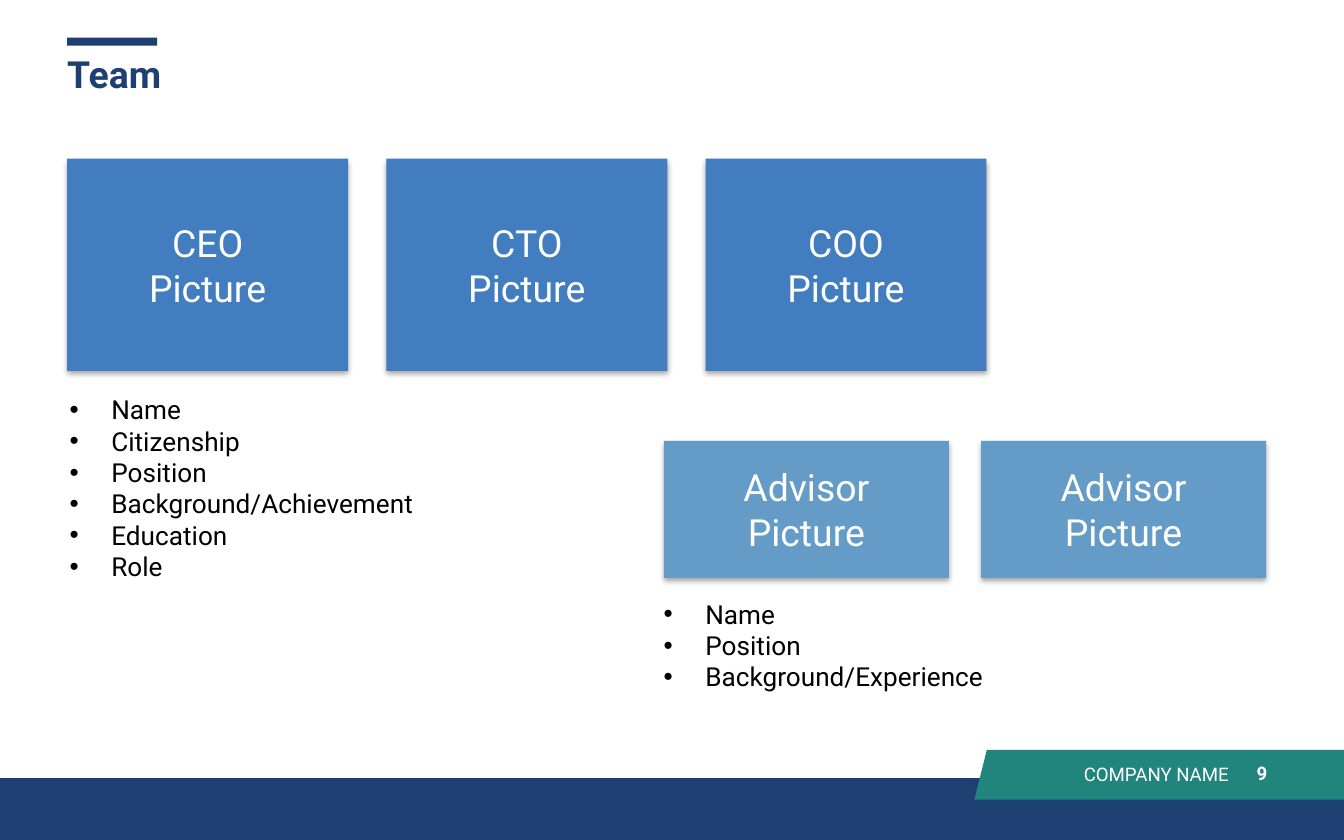
from dataclasses import dataclass

from lxml.etree import SubElement
from pptx import Presentation
from pptx.dml.color import RGBColor
from pptx.enum.shapes import MSO_SHAPE
from pptx.enum.text import MSO_ANCHOR, MSO_AUTO_SIZE, PP_ALIGN
from pptx.oxml.ns import qn
from pptx.util import Inches, Pt


@dataclass(frozen=True)
class Theme:
    font: str = "Roboto"
    navy: str = "1E3F72"
    teal: str = "22857D"
    founder: str = "417DBF"
    advisor: str = "649CC7"
    white: str = "FFFFFF"
    black: str = "000000"
    heading: int = 20
    body: int = 14
    small: int = 10


@dataclass(frozen=True)
class Box:
    """An area of the slide, in grid cells."""
    left: float
    top: float
    width: float
    height: float

    def inner(self, left, top, width, height):
        return Box(self.left + left, self.top + top, width, height)

    def columns(self, count, gap):
        width = (self.width - gap * (count - 1)) / count
        return [self.inner(i * (width + gap), 0, width, self.height) for i in range(count)]

    def emu(self):
        return [cells(n) for n in (self.left, self.top, self.width, self.height)]


THEME = Theme()
CELL = 0.1  # inches; the slide is 100 columns by 62.5 rows
COLUMNS, ROWS = 100, 62.5
TIGHT = dict(margin_left=0.8, margin_right=0.8, margin_top=0.4, margin_bottom=0.4)


def cells(count):
    return Inches(count * CELL)


def write(frame, lines, size, color, bold=False, align=PP_ALIGN.LEFT,
          anchor=MSO_ANCHOR.TOP, margins=None, bullets=False):
    frame.word_wrap = True
    frame.vertical_anchor = anchor
    for side, margin in (margins or {}).items():
        setattr(frame, side, cells(margin))
    for i, line in enumerate(lines):
        paragraph = frame.add_paragraph() if i else frame.paragraphs[0]
        paragraph.alignment = align
        if bullets:
            properties = paragraph._p.get_or_add_pPr()
            properties.set("marL", str(cells(3.1)))
            properties.set("indent", str(cells(-3.1)))
            SubElement(properties, qn("a:buFont"), typeface="Arial")
            SubElement(properties, qn("a:buChar"), char="•")
        run = paragraph.add_run()
        run.text = line
        font = run.font
        for name, value in dict(name=THEME.font, size=Pt(size), bold=bold).items():
            setattr(font, name, value)
        font.color.rgb = RGBColor.from_string(color)


def add_text(slide, box, lines, size, color, **style):
    text = slide.shapes.add_textbox(*box.emu())
    write(text.text_frame, lines, size, color, **style)
    return text


def add_block(slide, box, color, kind=MSO_SHAPE.RECTANGLE):
    block = slide.shapes.add_shape(kind, *box.emu())
    block.shadow.inherit = False
    block.fill.solid()
    block.fill.fore_color.rgb = RGBColor.from_string(color)
    block.line.fill.background()
    return block


def drop_shadow(block):
    effects = block._element.spPr.find(qn("a:effectLst"))
    shadow = SubElement(effects, qn("a:outerShdw"), blurRad=str(Pt(3.1)),
                        dist=str(Pt(1.8)), dir="5400000", rotWithShape="0")
    color = SubElement(shadow, qn("a:srgbClr"), val=THEME.black)
    SubElement(color, qn("a:alpha"), val="35000")


def add_footer(slide, box):
    add_block(slide, box.inner(0, 2.1, box.width, 4.6), THEME.navy)
    add_block(slide, box.inner(72.5, 0, 29, 3.7), THEME.teal, MSO_SHAPE.PARALLELOGRAM)
    add_text(slide, box.inner(37.3, 0.5, 55.1, 3.3), ["COMPANY NAME"],
             THEME.small, THEME.white, align=PP_ALIGN.RIGHT)
    add_text(slide, box.inner(91.1, 0.1, 4, 3.3), ["9"], THEME.small, THEME.white,
             bold=True, align=PP_ALIGN.RIGHT, anchor=MSO_ANCHOR.MIDDLE, margins=TIGHT)


def add_heading(slide, box, title):
    add_block(slide, box.inner(0.8, 0, 6.7, 0.6), THEME.navy)
    add_text(slide, box.inner(0, 0.6, box.width, box.height - 0.6), [title],
             THEME.heading, THEME.navy, bold=True, anchor=MSO_ANCHOR.MIDDLE, margins=TIGHT)


def add_cards(slide, box, gap, roles, color):
    for role, place in zip(roles, box.columns(len(roles), gap)):
        card = add_block(slide, place, color)
        drop_shadow(card)
        write(card.text_frame, [role, "Picture"], THEME.heading, THEME.white,
              align=PP_ALIGN.CENTER, anchor=MSO_ANCHOR.MIDDLE)


def add_details(slide, box, details):
    text = add_text(slide, box, details, THEME.body, THEME.black, bullets=True)
    text.text_frame.auto_size = MSO_AUTO_SIZE.SHAPE_TO_FIT_TEXT


def main():
    deck = Presentation()
    deck.slide_width, deck.slide_height = cells(COLUMNS), cells(ROWS)
    slide = deck.slides.add_slide(deck.slide_layouts[6])

    add_footer(slide, Box(0, 55.8, COLUMNS, 6.7))
    add_heading(slide, Box(4.2, 2.8, 42, 4.7), "Team")

    # Founders
    add_cards(slide, Box(5, 11.8, 68.4, 15.8), 2.85, ["CEO", "CTO", "COO"], THEME.founder)
    add_details(slide, Box(4.2, 28.8, 33.1, 15.1),
                ["Name", "Citizenship", "Position", "Background/Achievement",
                 "Education", "Role"])

    # Advisors
    add_cards(slide, Box(49.4, 32.8, 44.8, 10.2), 2.4, ["Advisor"] * 2, THEME.advisor)
    add_details(slide, Box(48.4, 44, 31.3, 8.1),
                ["Name", "Position", "Background/Experience"])

    deck.save("out.pptx")


if __name__ == "__main__":
    main()
